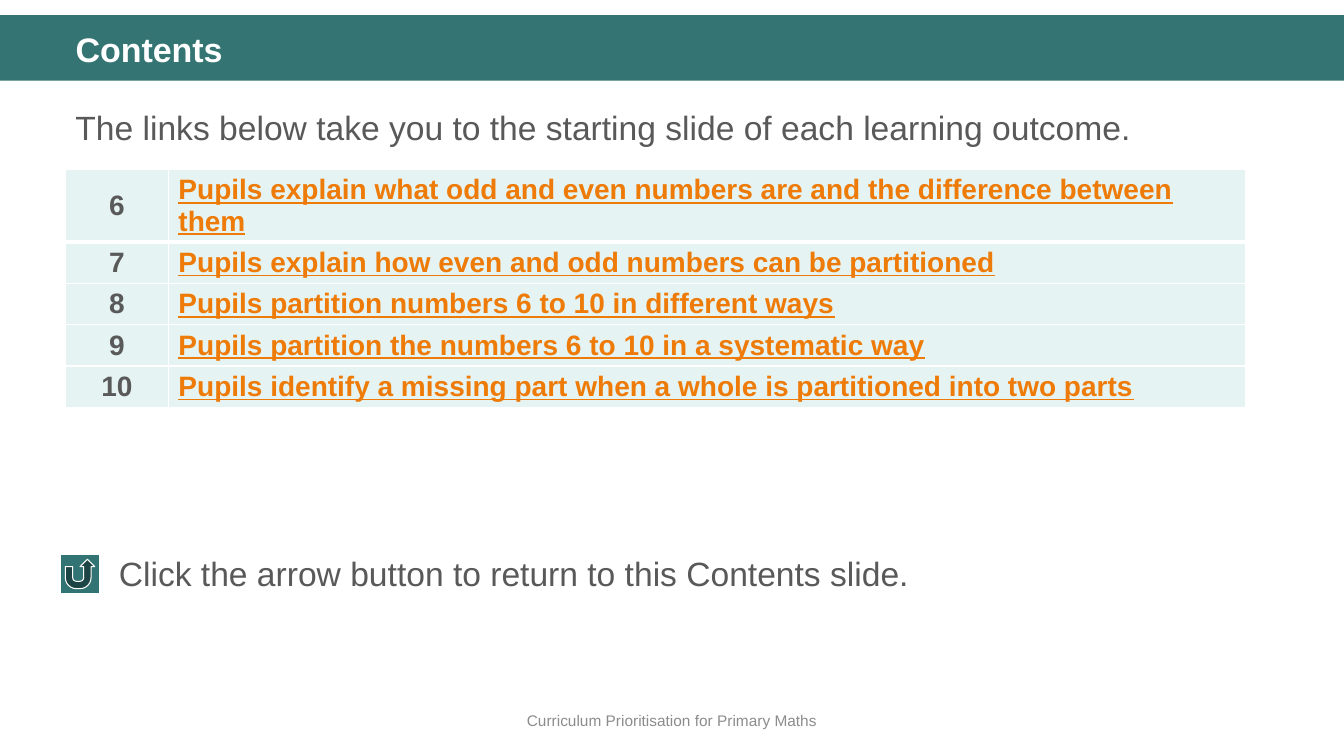
from dataclasses import dataclass

from lxml.etree import SubElement
from pptx import Presentation
from pptx.dml.color import RGBColor
from pptx.enum.shapes import MSO_SHAPE
from pptx.enum.text import MSO_ANCHOR, MSO_AUTO_SIZE, PP_ALIGN
from pptx.oxml.ns import qn
from pptx.shapes.autoshape import Shape
from pptx.slide import Slide
from pptx.table import _Cell as Cell
from pptx.text.text import TextFrame
from pptx.util import Pt

WHITE = RGBColor(0xFF, 0xFF, 0xFF)
BAND_TEAL = RGBColor(0x34, 0x75, 0x74)
BUTTON_TEAL = RGBColor(0x32, 0x74, 0x73)
PALE_TEAL = RGBColor(0xE5, 0xF3, 0xF2)
TEXT_GREY = RGBColor(0x59, 0x59, 0x59)
FOOTER_GREY = RGBColor(0x8C, 0x8C, 0x8C)
LINK_ORANGE = RGBColor(0xEE, 0x7B, 0x08)

SLIDE_WIDTH, SLIDE_HEIGHT = 960, 540
MARGIN_LEFT = 46.8
TABLE_TOP = 121
COLUMN_WIDTHS = (73.5, 769.5)
ROW_HEIGHT = 29.5
THIN_BORDER, HEADER_BORDER = 1, 3


@dataclass(frozen=True)
class TextStyle:
    size: float
    color: RGBColor
    bold: bool = False
    underline: bool = False
    align: PP_ALIGN = PP_ALIGN.LEFT
    anchor: MSO_ANCHOR = MSO_ANCHOR.TOP
    line_spacing: float = 1.0


@dataclass(frozen=True)
class TextBox:
    text: str
    left: float
    top: float
    width: float
    height: float
    style: TextStyle


@dataclass(frozen=True)
class Outcome:
    number: int
    title: str


TITLE_STYLE = TextStyle(24.3, WHITE, bold=True, anchor=MSO_ANCHOR.BOTTOM, line_spacing=0.9)
NUMBER_STYLE = TextStyle(20, TEXT_GREY, bold=True, align=PP_ALIGN.CENTER, anchor=MSO_ANCHOR.MIDDLE)
LINK_STYLE = TextStyle(20, LINK_ORANGE, bold=True, underline=True, anchor=MSO_ANCHOR.MIDDLE)

TITLE = TextBox("Contents", MARGIN_LEFT, 19.4, 877, 33.8, TITLE_STYLE)
TEXT_BOXES = (
    TextBox("Curriculum Prioritisation for Primary Maths", 0, 500.4, SLIDE_WIDTH, 28.8,
            TextStyle(11, FOOTER_GREY, align=PP_ALIGN.CENTER, anchor=MSO_ANCHOR.MIDDLE)),
    TextBox("The links below take you to the starting slide of each learning outcome.",
            MARGIN_LEFT, 67, 877, 252.7, TextStyle(24, TEXT_GREY, line_spacing=1.2)),
    TextBox("Click the arrow button to return to this Contents slide.",
            77.8, 391.7, 815, 36, TextStyle(24, TEXT_GREY)),
)
OUTCOMES = (
    Outcome(6, "Pupils explain what odd and even numbers are and the difference between them"),
    Outcome(7, "Pupils explain how even and odd numbers can be partitioned"),
    Outcome(8, "Pupils partition numbers 6 to 10 in different ways"),
    Outcome(9, "Pupils partition the numbers 6 to 10 in a systematic way"),
    Outcome(10, "Pupils identify a missing part when a whole is partitioned into two parts"),
)


def write_text(frame: TextFrame, text: str, style: TextStyle) -> None:
    frame.text = text
    frame.word_wrap = True
    para = frame.paragraphs[0]
    para.alignment = style.align
    para.line_spacing = style.line_spacing
    para.space_before = Pt(0)
    font = para.runs[0].font
    font.name = "Arial"
    font.size = Pt(style.size)
    font.bold = style.bold
    font.underline = style.underline
    font.color.rgb = style.color


def fill_box(shape: Shape, box: TextBox) -> None:
    shape.left, shape.top = Pt(box.left), Pt(box.top)
    shape.width, shape.height = Pt(box.width), Pt(box.height)
    write_text(shape.text_frame, box.text, box.style)
    shape.text_frame.vertical_anchor = box.style.anchor
    shape.text_frame.auto_size = MSO_AUTO_SIZE.NONE


def add_plain_shape(slide: Slide, kind: MSO_SHAPE, left: float, top: float,
                    width: float, height: float, color: RGBColor) -> Shape:
    shape = slide.shapes.add_shape(kind, Pt(left), Pt(top), Pt(width), Pt(height))
    shape.shadow.inherit = False
    shape.fill.solid()
    shape.fill.fore_color.rgb = color
    shape.line.fill.background()
    return shape


def add_borders(cell: Cell, top: float, bottom: float) -> None:
    properties = cell._tc.get_or_add_tcPr()
    widths = {"a:lnL": THIN_BORDER, "a:lnR": THIN_BORDER, "a:lnT": top, "a:lnB": bottom}
    for tag, width in widths.items():
        line = SubElement(properties, qn(tag), w=str(Pt(width)))
        fill = SubElement(line, qn("a:solidFill"))
        SubElement(fill, qn("a:srgbClr"), val=str(WHITE))


def add_outcome_table(slide: Slide) -> None:
    table = slide.shapes.add_table(
        len(OUTCOMES), len(COLUMN_WIDTHS), Pt(MARGIN_LEFT), Pt(TABLE_TOP),
        Pt(sum(COLUMN_WIDTHS)), Pt(ROW_HEIGHT * len(OUTCOMES))).table
    table.first_row = False
    table.horz_banding = False
    for column, width in zip(table.columns, COLUMN_WIDTHS):
        column.width = Pt(width)
    for index, outcome in enumerate(OUTCOMES):
        table.rows[index].height = Pt(ROW_HEIGHT)
        top = HEADER_BORDER if index == 1 else THIN_BORDER
        bottom = HEADER_BORDER if index == 0 else THIN_BORDER
        entries = ((str(outcome.number), NUMBER_STYLE), (outcome.title, LINK_STYLE))
        for cell, (text, style) in zip(table.rows[index].cells, entries):
            add_borders(cell, top, bottom)
            cell.fill.solid()
            cell.fill.fore_color.rgb = PALE_TEAL
            cell.vertical_anchor = style.anchor
            write_text(cell.text_frame, text, style)


def main() -> None:
    deck = Presentation()
    deck.slide_width, deck.slide_height = Pt(SLIDE_WIDTH), Pt(SLIDE_HEIGHT)
    slide = deck.slides.add_slide(deck.slide_layouts.get_by_name("Title Only"))

    title = slide.shapes.title
    fill_box(title, TITLE)
    band = add_plain_shape(slide, MSO_SHAPE.RECTANGLE, 0, 10.8, SLIDE_WIDTH, 46.8, BAND_TEAL)
    title.element.addprevious(band.element)

    for box in TEXT_BOXES:
        fill_box(slide.shapes.add_textbox(0, 0, 0, 0), box)
    add_outcome_table(slide)

    button = add_plain_shape(slide, MSO_SHAPE.ACTION_BUTTON_RETURN, 43.2, 396, 28, 28, BUTTON_TEAL)
    button.line.color.rgb = WHITE
    button.line.width = Pt(0.75)

    deck.save("out.pptx")


if __name__ == "__main__":
    main()
